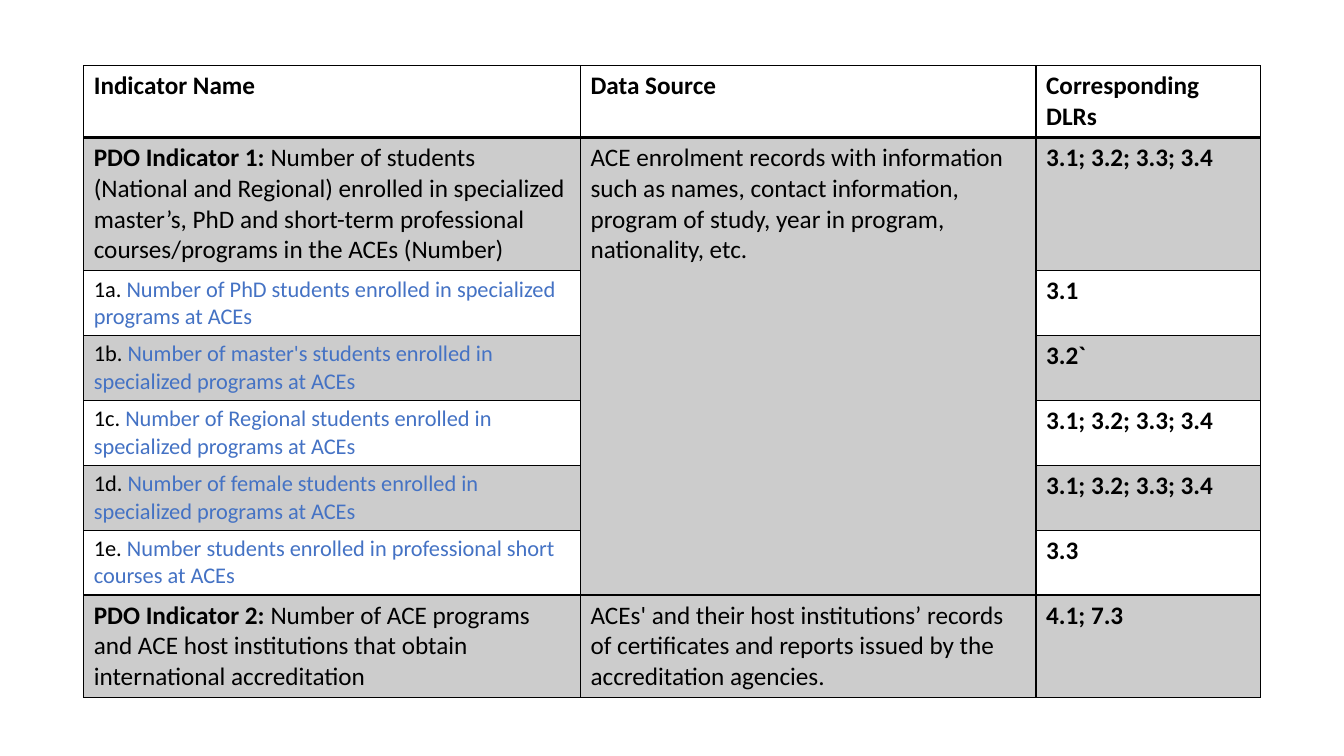
from lxml.etree import SubElement
from pptx import Presentation
from pptx.dml.color import RGBColor
from pptx.oxml.ns import qn
from pptx.util import Cm, Pt

BLACK = RGBColor(0x00, 0x00, 0x00)
BLUE = RGBColor(0x44, 0x72, 0xC4)
FONT = "Calibri"
BAND_OPACITY = 20

TABLE_BOX = (2.11, 1.66, 29.66, 15.88)
COLUMN_WIDTHS = (12.52, 11.48, 5.66)
ROW_HEIGHTS = (1.8, 3.35, *[1.63] * 5, 2.58)
HEADINGS = ("Indicator Name", "Data Source", "Corresponding DLRs")
INDICATORS = (
    ("PDO Indicator 1: ",
     "Number of students (National and Regional) enrolled in specialized master’s, "
     "PhD and short-term professional courses/programs in the ACEs (Number)",
     "ACE enrolment records\u00a0with information such as names, contact information, "
     "program of study, year in program, nationality, etc.",
     "3.1; 3.2; 3.3; 3.4"),
    ("1a. ", "Number of PhD students enrolled in specialized programs at ACEs", "", "3.1"),
    ("1b. ", "Number of master's students enrolled in specialized programs at ACEs", "", "3.2`"),
    ("1c. ", "Number of Regional students enrolled in specialized programs at ACEs", "",
     "3.1; 3.2; 3.3; 3.4"),
    ("1d. ", "Number of female students enrolled in specialized programs at ACEs", "",
     "3.1; 3.2; 3.3; 3.4"),
    ("1e. ", "Number students enrolled in professional short courses at ACEs", "", "3.3"),
    ("PDO Indicator 2: ",
     "Number of ACE programs and ACE host institutions that obtain international accreditation",
     "ACEs' and their host institutions’ records of certificates and reports issued by "
     "the accreditation agencies.",
     "4.1; 7.3"),
)


def add_run(cell, text, size=18, bold=False, color=BLACK):
    """Append one formatted run to the cell."""
    run = cell.text_frame.paragraphs[0].add_run()
    run.text = text
    run.font.name = FONT
    run.font.size = Pt(size)
    run.font.bold = bold
    run.font.color.rgb = color


def set_borders(cell, top, bottom):
    """Draw black borders, with the given top and bottom widths in points."""
    properties = cell._tc.get_or_add_tcPr()
    for side, width in (("L", 1), ("R", 1), ("T", top), ("B", bottom)):
        line = SubElement(properties, qn(f"a:ln{side}"), w=str(Pt(width)))
        fill = SubElement(line, qn("a:solidFill"))
        SubElement(fill, qn("a:srgbClr"), val=str(BLACK))


def set_band(cell, shaded):
    """Fill the cell with translucent black, or leave it clear."""
    if not shaded:
        cell.fill.background()
        return
    cell.fill.solid()
    cell.fill.fore_color.rgb = BLACK
    color = cell._tc.tcPr.find(qn("a:solidFill")).find(qn("a:srgbClr"))
    SubElement(color, qn("a:alpha"), val=str(BAND_OPACITY * 1000))


def fill_indicator(table, row, label, description, source, results):
    """Write one indicator; sub-indicators are smaller and blue."""
    main = label.startswith("PDO")
    size = 18 if main else 16
    add_run(table.cell(row, 0), label, size, bold=main)
    add_run(table.cell(row, 0), description, size, color=BLACK if main else BLUE)
    if source:
        add_run(table.cell(row, 1), source)
    add_run(table.cell(row, 2), results, bold=True)


def add_indicator_table(slide, box):
    """Place the table of indicators in the box."""
    frame = slide.shapes.add_table(
        len(ROW_HEIGHTS), len(COLUMN_WIDTHS), *[Cm(length) for length in box])
    table = frame.table
    table.first_row = table.horz_banding = False
    for column, width in zip(table.columns, COLUMN_WIDTHS):
        column.width = Cm(width)
    for index, (row, height) in enumerate(zip(table.rows, ROW_HEIGHTS)):
        row.height = Cm(height)
        for cell in row.cells:
            set_borders(cell, top=2 if index == 1 else 1, bottom=2 if index == 0 else 1)
            set_band(cell, index % 2 == 1)
    table.cell(1, 1).merge(table.cell(6, 1))
    for column, heading in enumerate(HEADINGS):
        add_run(table.cell(0, column), heading, bold=True)
    for row, indicator in enumerate(INDICATORS, start=1):
        fill_indicator(table, row, *indicator)


def main():
    """Build and save the presentation."""
    presentation = Presentation()
    presentation.slide_width = Cm(33.87)
    presentation.slide_height = Cm(19.05)
    slide = presentation.slides.add_slide(presentation.slide_layouts[6])
    add_indicator_table(slide, TABLE_BOX)
    presentation.save("out.pptx")


if __name__ == "__main__":
    main()
